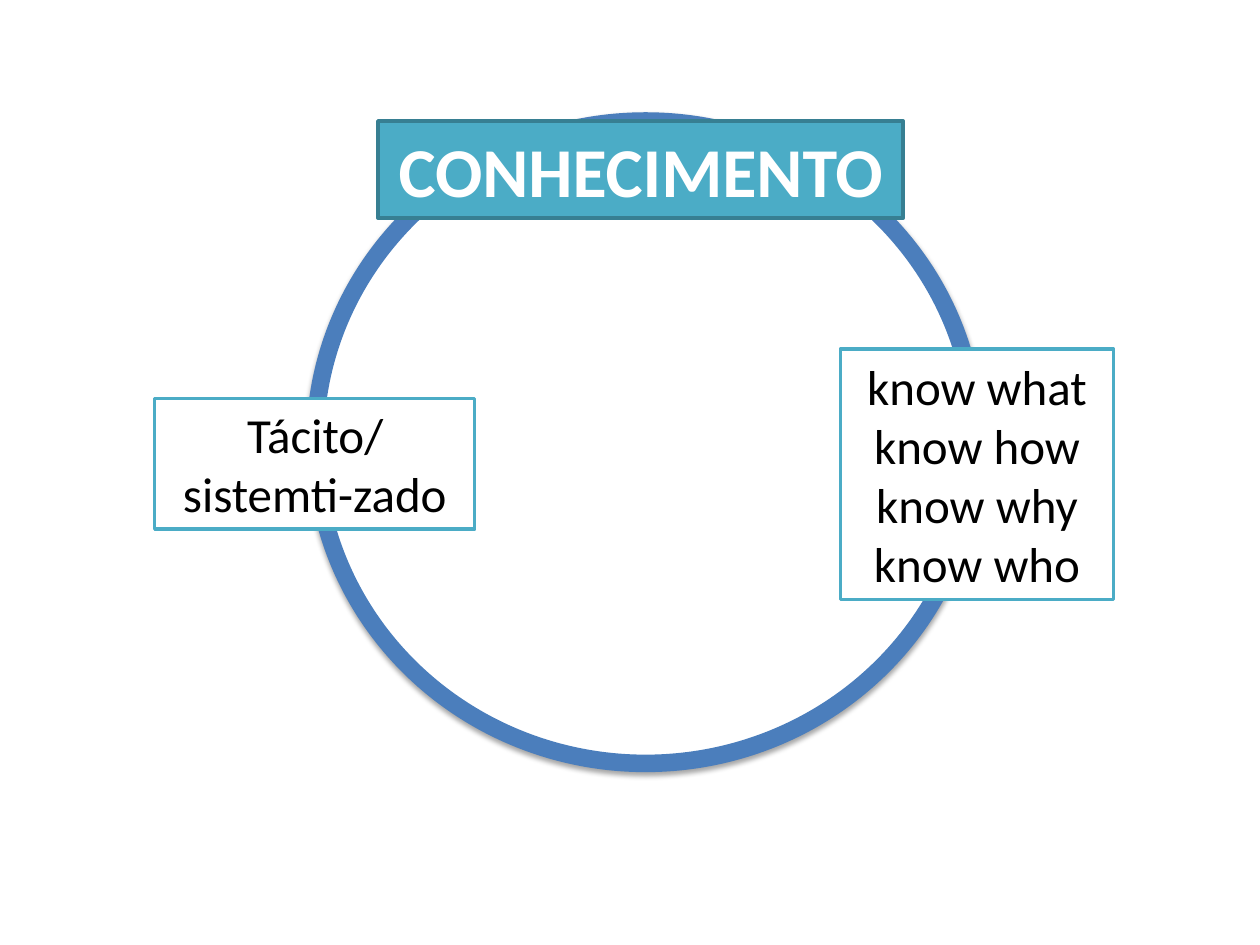
from dataclasses import dataclass

from lxml import etree
from pptx import Presentation
from pptx import util as u
from pptx.dml.color import RGBColor
from pptx.enum import shapes, text
from pptx.oxml import ns


@dataclass(frozen=True)
class Theme:
    font: str = "Calibri"
    white: str = "FFFFFF"
    black: str = "000000"
    ring: str = "4B7EBC"
    teal: str = "4BACC6"
    dark_teal: str = "377F92"
    title_size: int = 40
    body_size: int = 28
    ring_width: int = 10
    border_width: int = 2


class SlideBuilder:
    def __init__(self, slide, theme):
        self.slide = slide
        self.theme = theme

    def shape(self, kind, place, fill, line, width):
        shape = self.slide.shapes.add_shape(kind, *map(u.Cm, place))
        shape.shadow.inherit = False
        shape.fill.solid()
        shape.fill.fore_color.rgb = RGBColor.from_string(fill)
        shape.line.color.rgb = RGBColor.from_string(line)
        shape.line.width = u.Pt(width)
        return shape

    def ring(self, place):
        theme = self.theme
        ring = self.shape(shapes.MSO_SHAPE.OVAL, place, theme.white, theme.ring, theme.ring_width)
        effects = ring._element.spPr.find(ns.qn("a:effectLst"))
        shadow = etree.SubElement(
            effects, ns.qn("a:outerShdw"), blurRad=str(u.Pt(3.1)),
            dist=str(u.Pt(1.8)), dir="5400000", rotWithShape="0")
        color = etree.SubElement(shadow, ns.qn("a:srgbClr"), val=theme.black)
        etree.SubElement(color, ns.qn("a:alpha"), val="35000")

    def box(self, place, wording, fill, line, ink, size, bold=False):
        box = self.shape(shapes.MSO_SHAPE.RECTANGLE, place, fill, line, self.theme.border_width)
        frame = box.text_frame
        frame.word_wrap = True
        frame.auto_size = text.MSO_AUTO_SIZE.SHAPE_TO_FIT_TEXT
        frame.text = wording
        for para in frame.paragraphs:
            para.alignment = text.PP_ALIGN.CENTER
            for span in para.runs:
                span.font.name = self.theme.font
                span.font.size = u.Pt(size)
                span.font.bold = bold
                span.font.color.rgb = RGBColor.from_string(ink)

    def title(self, place, wording):
        theme = self.theme
        self.box(place, wording, theme.teal, theme.dark_teal, theme.white, theme.title_size, True)

    def label(self, place, wording):
        theme = self.theme
        self.box(place, wording, theme.white, theme.teal, theme.black, theme.body_size)


def main():
    deck = Presentation()
    deck.slide_width = u.Cm(25.4)
    deck.slide_height = u.Cm(19.05)
    page = SlideBuilder(deck.slides.add_slide(deck.slide_layouts[6]), Theme())

    page.ring((6.35, 2.44, 13.33, 12.95))
    page.title((7.62, 2.44, 10.59, 1.96), "CONHECIMENTO")
    kinds = ("what", "how", "why", "who")
    page.label((16.94, 7.04, 5.51, 5.05), "\n".join(f"know {kind}" for kind in kinds))
    page.label((3.12, 8.03, 6.45, 2.64), "Tácito/sistemti-zado")

    deck.save("out.pptx")


if __name__ == "__main__":
    main()
